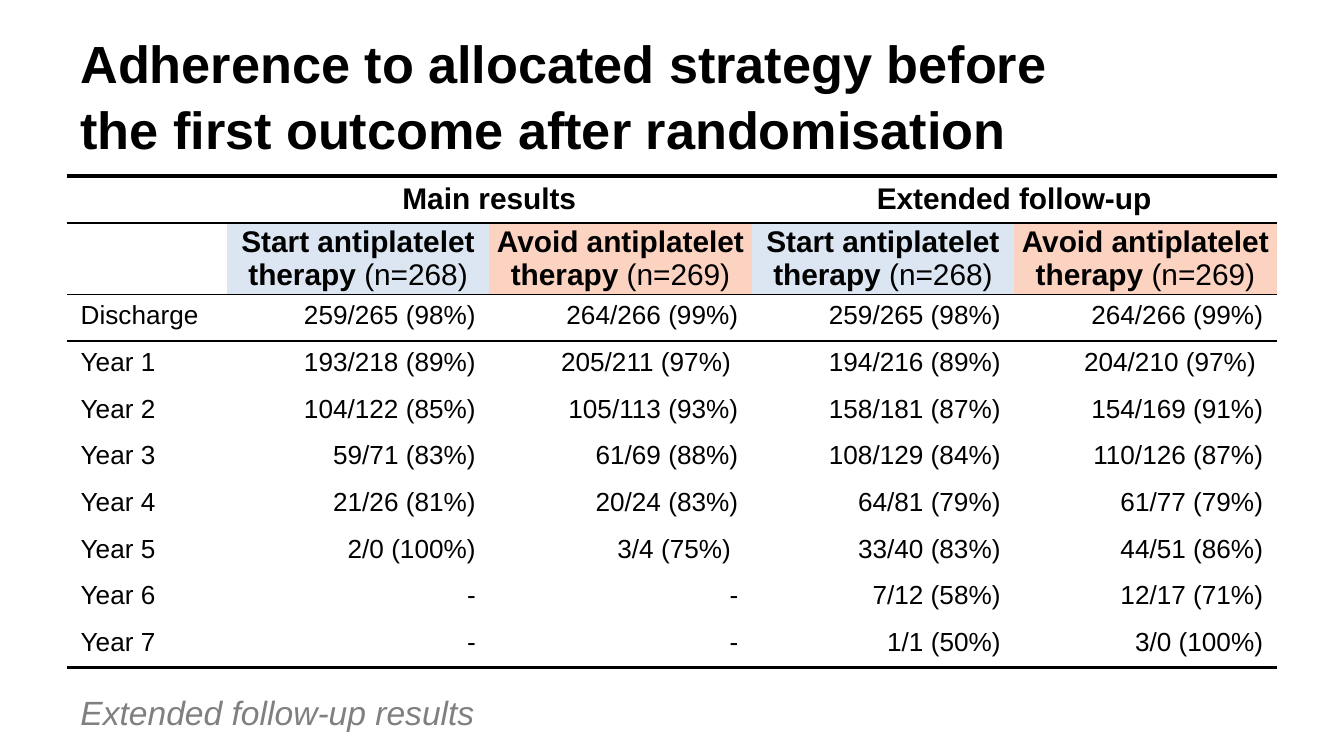
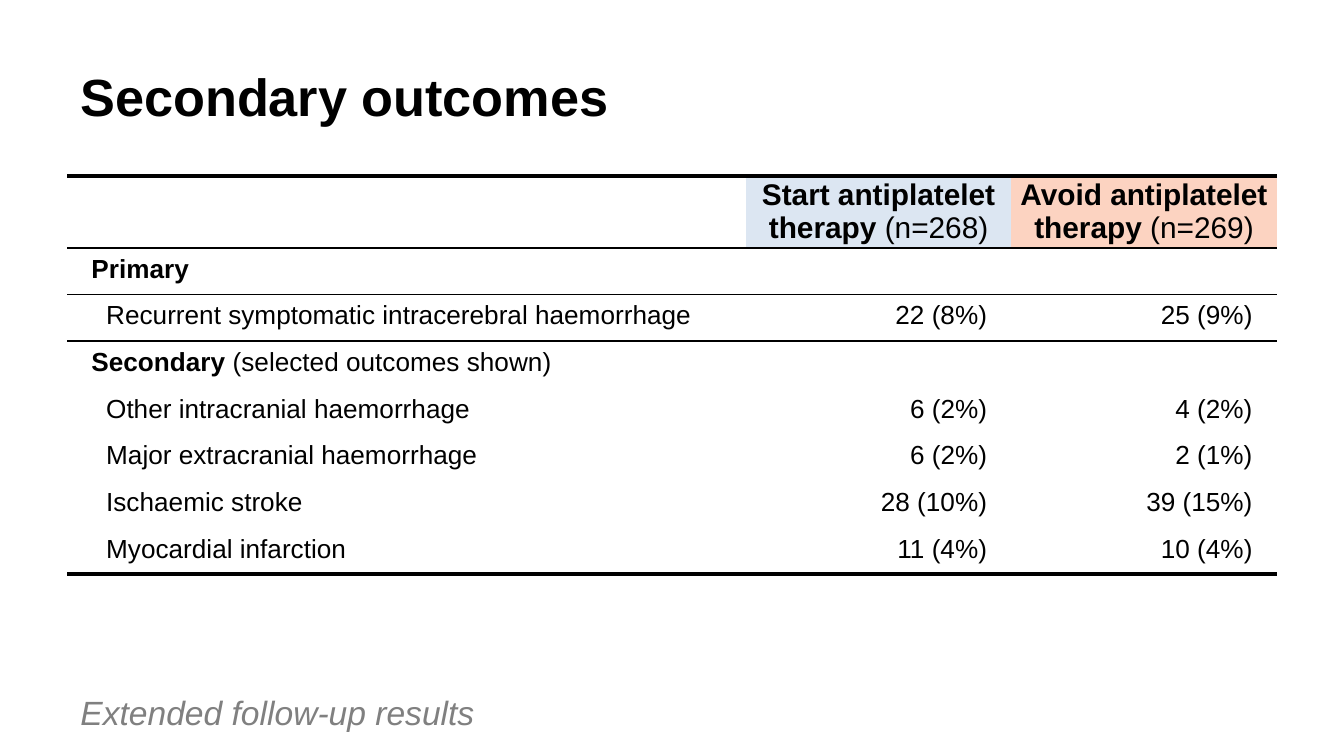
import lxml.etree
import pptx
import pptx.dml.color
import pptx.enum.text
import pptx.oxml.ns
import pptx.util

FONT = "Arial"
COLOURS = {"ink": "000000", "start": "DCE6F2", "avoid": "FCD3C1", "footer": "808080"}
TITLE_SIZE, FOOTER_SIZE, HEADER_SIZE, BODY_SIZE = 28, 18, 16, 14
THICK, THIN = 2.25, 1
NO_GRID_STYLE = "{2D5ABB26-0587-4C30-8999-92F81FD0307C}"

# Places and sizes are percentages of the slide's width or height
LEFT, TABLE_WIDTH, TABLE_TOP = 5, 90, 23.3
BODY_ROW, HEADER_ROW = 6.17, 8.9

ALIGN = pptx.enum.text.PP_ALIGN
ANCHOR = pptx.enum.text.MSO_ANCHOR


class Deck:
    """Holds the shared style and the slide being built."""

    def __init__(self):
        self.prs = pptx.Presentation()
        self.prs.slide_width = pptx.util.Inches(10)
        self.prs.slide_height = pptx.util.Inches(10 * 9 / 16)
        self.slide = None

    def across(self, share):
        return round(self.prs.slide_width * share / 100)

    def down(self, share):
        return round(self.prs.slide_height * share / 100)

    def start_slide(self, title):
        self.slide = self.prs.slides.add_slide(self.prs.slide_layouts[6])
        heading = self.text(4.1, 78.5, 16.7, title, TITLE_SIZE, bold=True, anchor=ANCHOR.MIDDLE)
        heading.line_spacing = 1.05

    def footer(self, words):
        self.text(90.7, 90.2, 8.4, words, FOOTER_SIZE, colour="footer", italic=True)

    def text(self, top, width, height, words, size, colour="ink",
             bold=False, italic=False, anchor=ANCHOR.TOP):
        box = self.slide.shapes.add_textbox(
            self.across(LEFT), self.down(top), self.across(width), self.down(height))
        box.text_frame.word_wrap = True
        box.text_frame.vertical_anchor = anchor
        paragraph = box.text_frame.paragraphs[0]
        self.run(paragraph, words, size, colour, bold, italic)
        return paragraph

    def run(self, paragraph, words, size, colour="ink", bold=False, italic=False):
        run = paragraph.add_run()
        run.text = words
        font = run.font
        font.name, font.size = FONT, pptx.util.Pt(size)
        font.bold, font.italic = bold, italic
        font.color.rgb = pptx.dml.color.RGBColor.from_string(COLOURS[colour])

    def table(self, row_count, data_columns, data_width, tall_row, rules):
        """Add an empty table; rules maps a row edge to its line width."""
        heights = [HEADER_ROW if r == tall_row else BODY_ROW for r in range(row_count)]
        table = self.slide.shapes.add_table(
            row_count, data_columns + 1, self.across(LEFT), self.down(TABLE_TOP),
            self.across(TABLE_WIDTH), self.down(sum(heights))).table
        table.first_row = table.horz_banding = False
        style = table._tbl.tblPr.find(pptx.oxml.ns.qn("a:tableStyleId"))
        style.text = NO_GRID_STYLE
        label_width = TABLE_WIDTH - data_columns * data_width
        for column, width in zip(table.columns, [label_width] + [data_width] * data_columns):
            column.width = self.across(width)
        for r, (row, height) in enumerate(zip(table.rows, heights)):
            row.height = self.down(height)
            for cell in row.cells:
                cell.margin_left = cell.margin_right = cell.margin_top = cell.margin_bottom = 0
                cell.fill.background()
                self.border(cell, "a:lnB", rules.get(r + 1))
                self.border(cell, "a:lnT", rules.get(r))
        return table

    def border(self, cell, side, width):
        if width is None:
            return
        qn = pptx.oxml.ns.qn
        line = lxml.etree.Element(qn(side), w=str(pptx.util.Pt(width)))
        fill = lxml.etree.SubElement(line, qn("a:solidFill"))
        lxml.etree.SubElement(fill, qn("a:srgbClr"), val=COLOURS["ink"])
        cell._tc.get_or_add_tcPr().insert(0, line)

    def header_cell(self, cell, name, count="", fill=None):
        cell.vertical_anchor = ANCHOR.MIDDLE
        paragraph = cell.text_frame.paragraphs[0]
        paragraph.alignment = ALIGN.CENTER
        self.run(paragraph, name, HEADER_SIZE, bold=True)
        if count:
            self.run(paragraph, count, HEADER_SIZE)
        if fill:
            cell.fill.solid()
            cell.fill.fore_color.rgb = pptx.dml.color.RGBColor.from_string(COLOURS[fill])

    def arm_headers(self, cells):
        """Name the two treatment arms in turn along a header row."""
        for i, cell in enumerate(cells):
            name, count, fill = ARMS[i % len(ARMS)]
            self.header_cell(cell, name, count, fill)

    def body_cell(self, cell, words, margin, align=ALIGN.LEFT, heading="", indent=0):
        cell.margin_left = pptx.util.Inches(margin + indent)
        cell.margin_right = pptx.util.Inches(margin)
        cell.margin_top = cell.margin_bottom = pptx.util.Inches(0.05)
        paragraph = cell.text_frame.paragraphs[0]
        paragraph.alignment = align
        if heading:
            self.run(paragraph, heading, BODY_SIZE, bold=True)
        if words:
            self.run(paragraph, words, BODY_SIZE)


ARMS = [
    ("Start antiplatelet therapy ", "(n=268)", "start"),
    ("Avoid antiplatelet therapy ", "(n=269)", "avoid"),
]

ADHERENCE = [
    ("Discharge", "259/265 (98%)", "264/266 (99%)", "259/265 (98%)", "264/266 (99%)"),
    ("Year 1", "193/218 (89%)", "205/211 (97%) ", "194/216 (89%)", "204/210 (97%) "),
    ("Year 2", "104/122 (85%)", "105/113 (93%)", "158/181 (87%)", "154/169 (91%)"),
    ("Year 3", "59/71 (83%)", "61/69 (88%)", "108/129 (84%)", "110/126 (87%)"),
    ("Year 4", "21/26 (81%)", "20/24 (83%)", "64/81 (79%)", "61/77 (79%)"),
    ("Year 5", "2/0 (100%)", "3/4 (75%) ", "33/40 (83%)", "44/51 (86%)"),
    ("Year 6", "-", "-", "7/12 (58%)", "12/17 (71%)"),
    ("Year 7", "-", "-", "1/1 (50%)", "3/0 (100%)"),
]

# Group heading, label, then one value for each arm
OUTCOMES = [
    ("Primary", ""),
    ("", "Recurrent symptomatic intracerebral haemorrhage", "22 (8%)", "25 (9%)"),
    ("Secondary ", "(selected outcomes shown)"),
    ("", "Other intracranial haemorrhage", "6 (2%)", "4 (2%)"),
    ("", "Major extracranial haemorrhage", "6 (2%)", "2 (1%)"),
    ("", "Ischaemic stroke", "28 (10%)", "39 (15%)"),
    ("", "Myocardial infarction", "11 (4%)", "10 (4%)"),
]


def adherence_slide(deck):
    deck.start_slide("Adherence to allocated strategy before the first outcome after randomisation")
    last = len(ADHERENCE) + 2
    table = deck.table(last, 4, 19.53, tall_row=1,
                       rules={0: THICK, 1: THIN, 2: THIN, last: THICK})

    # Two follow-up periods, each over both arms
    for column, period in ((1, "Main results"), (3, "Extended follow-up")):
        table.cell(0, column).merge(table.cell(0, column + 1))
        deck.header_cell(table.cell(0, column), period)
    deck.arm_headers([table.cell(1, c) for c in range(1, 5)])

    for r, (visit, *values) in enumerate(ADHERENCE, start=2):
        deck.body_cell(table.cell(r, 0), visit, 0.1)
        for c, value in enumerate(values, start=1):
            deck.body_cell(table.cell(r, c), value, 0.1, ALIGN.RIGHT)
    deck.footer("Extended follow-up results")


def outcomes_slide(deck):
    deck.start_slide("Secondary outcomes")
    last = len(OUTCOMES) + 1
    table = deck.table(last, 2, 19.75, tall_row=0,
                       rules={0: THICK, 1: THIN, 2: THIN, last: THICK})
    deck.arm_headers([table.cell(0, c) for c in (1, 2)])

    # Outcomes are set in under their group heading
    for r, (heading, label, *values) in enumerate(OUTCOMES, start=1):
        deck.body_cell(table.cell(r, 0), label, 0.18, heading=heading,
                       indent=0 if heading else 0.11)
        for c, value in enumerate(values, start=1):
            deck.body_cell(table.cell(r, c), value, 0.18, ALIGN.RIGHT)
    deck.footer("Extended follow-up results")


def main():
    deck = Deck()
    adherence_slide(deck)
    outcomes_slide(deck)
    deck.prs.save("out.pptx")


if __name__ == "__main__":
    main()
